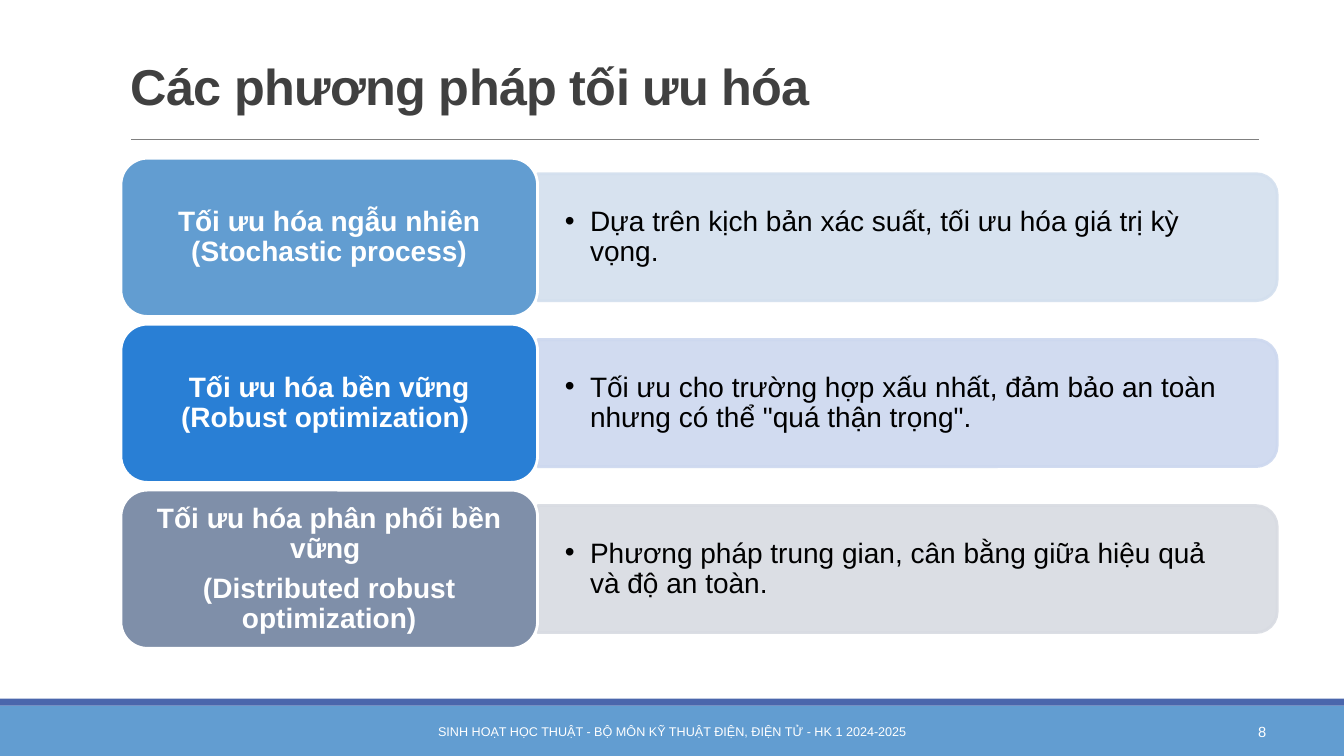
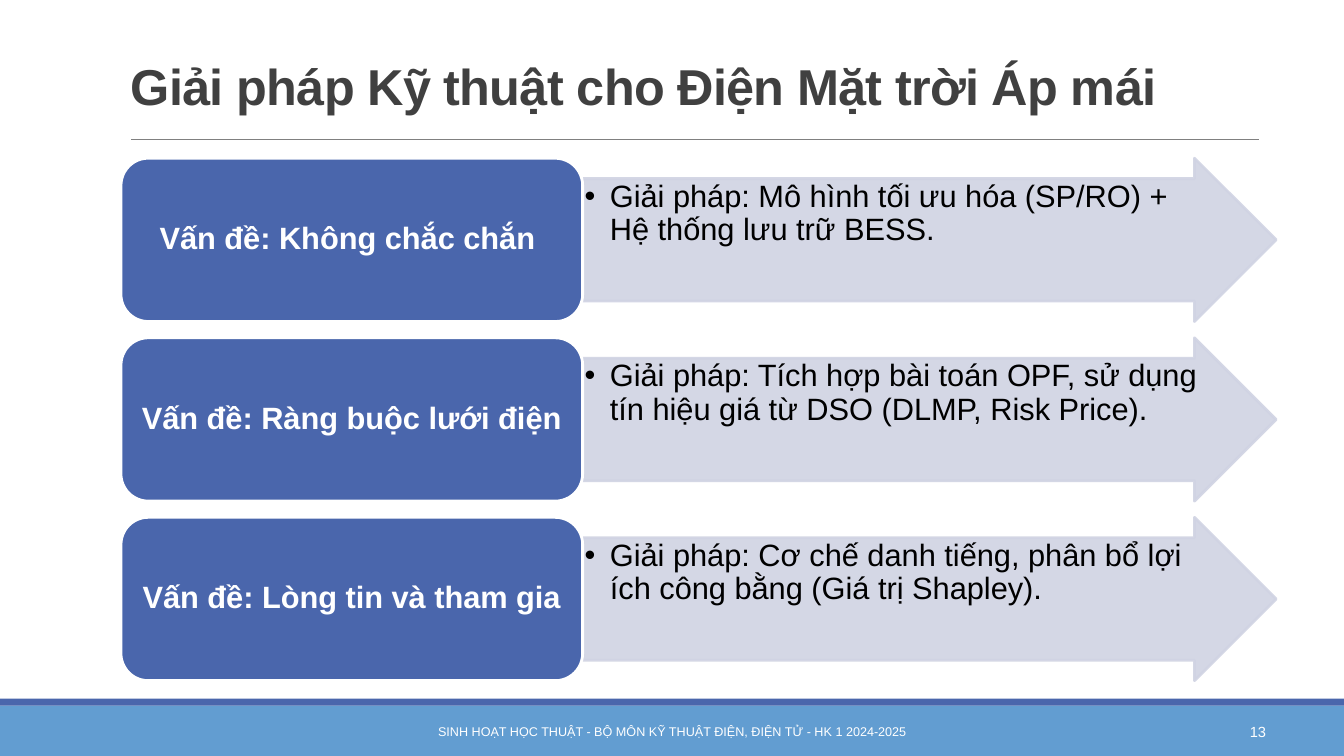
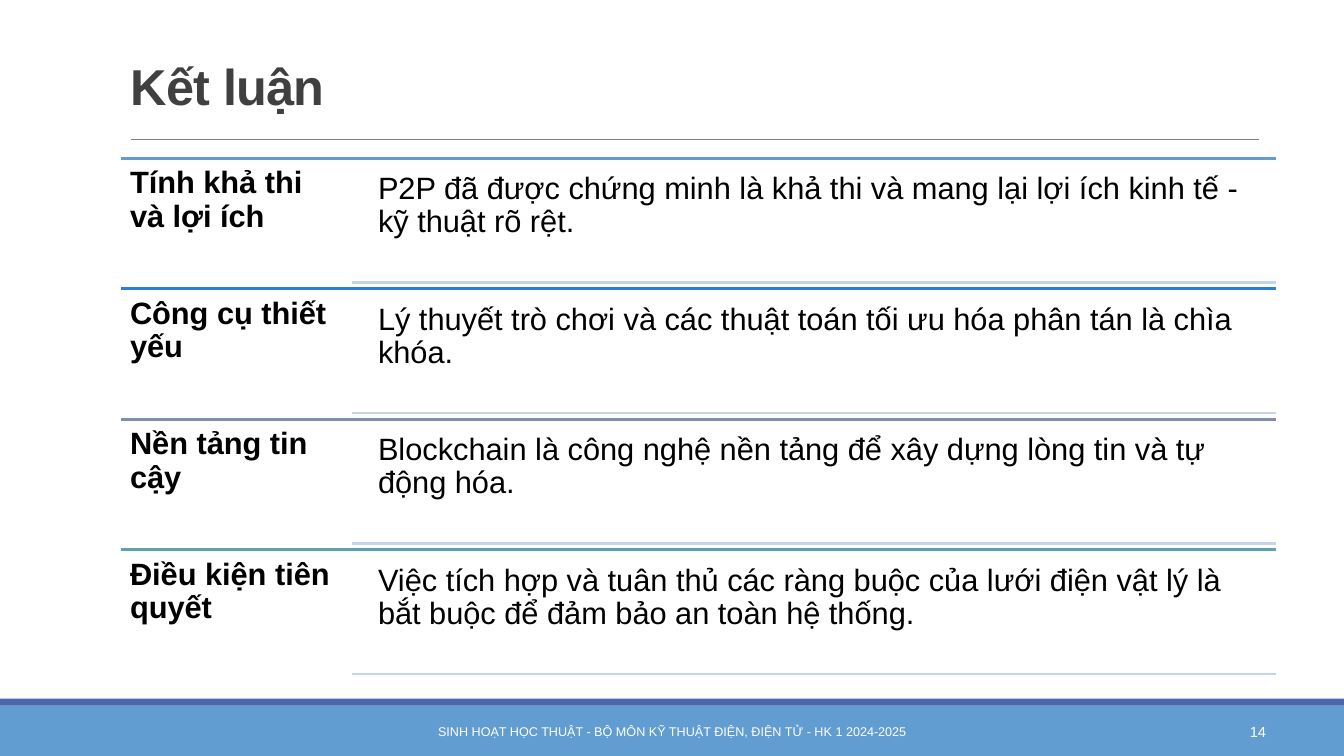
from lxml.etree import SubElement
from pptx import Presentation
from pptx.dml.color import RGBColor
from pptx.enum.shapes import MSO_CONNECTOR, MSO_SHAPE
from pptx.enum.text import MSO_ANCHOR, PP_ALIGN
from pptx.oxml.ns import qn
from pptx.util import Inches, Pt

HUES = {
    "sky": "629DD1", "royal": "4A66AC", "azure": "297FD5", "slate": "7F8FA9",
    "teal": "5AA2AE", "ice": "D3DFEE", "mist": "CDD8EF", "ash": "D8DBE2",
    "haze": "D0D3E3", "pale": "C5D5E9", "rule": "808080", "ink": "404040",
    "black": "000000", "white": "FFFFFF",
}
LEFT, RIGHT, TOP = 9, 94.95, 20.93
BAND = 93.33
FOOT = "SINH HOẠT HỌC THUẬT - BỘ MÔN KỸ THUẬT ĐIỆN, ĐIỆN TỬ - HK 1 2024-2025"

deck = Presentation()
deck.slide_width, deck.slide_height = Inches(13.333), Inches(7.5)
wide, high = deck.slide_width, deck.slide_height


def draw(page, kind, box, fill=None, line=None, width=2, clear=False, turn=False):
    x, y, w, h = [int(part * size / 100) for part, size in zip(box, (wide, high) * 2)]
    if kind == "text":
        return page.shapes.add_textbox(x, y, w, h)
    if kind == "line":
        shape = page.shapes.add_connector(MSO_CONNECTOR.STRAIGHT, x, y, x + w, y + h)
    else:
        if turn:
            x, y, w, h = x + (w - h) // 2, y + (h - w) // 2, h, w
        shape = page.shapes.add_shape(kind, x, y, w, h)
        shape.shadow.inherit = False
        shape.rotation = 90 if turn else 0
        shape.fill.solid()
        shape.fill.fore_color.rgb = RGBColor.from_string(HUES[fill])
    if line:
        shape.line.color.rgb = RGBColor.from_string(HUES[line])
        shape.line.width = Pt(width)
    else:
        shape.line.fill.background()
    props = shape._element.spPr
    if kind == "line":
        SubElement(props, qn("a:effectLst"))
    if clear:
        for tone in props.iter(qn("a:srgbClr")):
            SubElement(tone, qn("a:alpha"), val="90000")
    return shape


def write(shape, text, size, hue, bold=False, align=PP_ALIGN.LEFT, anchor=MSO_ANCHOR.TOP,
          inset=(0.1, 0.05), lead=1.0, gap=0, dot=False, track=None):
    frame = shape.text_frame
    across, down = map(Inches, inset)
    look = {"word_wrap": True, "vertical_anchor": anchor, "margin_left": across,
            "margin_right": across, "margin_top": down, "margin_bottom": down}
    for key, val in look.items():
        setattr(frame, key, val)
    frame.text = text
    for para in frame.paragraphs:
        for key, val in {"alignment": align, "line_spacing": lead,
                         "space_after": Pt(size * gap)}.items():
            setattr(para, key, val)
        run = para.runs[0]
        for key, val in {"name": "Arial", "size": Pt(size), "bold": bold}.items():
            setattr(run.font, key, val)
        run.font.color.rgb = RGBColor.from_string(HUES[hue])
        if track:
            run.font._element.set("spc", str(track))
        if dot:
            props = para._p.get_or_add_pPr()
            props.set("marL", str(Inches(0.25)))
            props.set("indent", str(-Inches(0.25)))
            SubElement(props, qn("a:buFont"), typeface="Arial")
            SubElement(props, qn("a:buChar"), char="•")


mid = {"anchor": MSO_ANCHOR.MIDDLE}
label = {"hue": "white", "bold": True, "align": PP_ALIGN.CENTER, "lead": 0.9, "gap": 0.35, **mid}
point = {"hue": "black", "lead": 0.9, "gap": 0.15, "dot": True}
plain = {"size": 22, "hue": "black", "lead": 0.9, "gap": 0.35, "inset": (0.09, 0.09)}

pages = []
for title, number in (("Các phương pháp tối ưu hóa", 8),
                      ("Giải pháp Kỹ thuật cho Điện Mặt trời Áp mái", 13),
                      ("Kết luận", 14)):
    page = deck.slides.add_slide(deck.slide_layouts[6])
    draw(page, MSO_SHAPE.RECTANGLE, (0, BAND, 100, 100 - BAND), "sky")
    draw(page, MSO_SHAPE.RECTANGLE, (0, 92.4, 100, BAND - 92.4), "royal")
    draw(page, "line", (9.75, 18.47, 83.95, 0), line="rule", width=0.5)
    write(draw(page, "text", (LEFT, 4.13, RIGHT - LEFT, 11.87)), title, 36, "ink", True,
          anchor=MSO_ANCHOR.BOTTOM, lead=0.85, track=-50)
    write(draw(page, "text", (30.23, 94.13, 39.54, 5.33)), FOOT, 9, "white",
          align=PP_ALIGN.CENTER, **mid)
    write(draw(page, "text", (81.23, 94.13, 13.72, 5.33)), str(number), 10.5, "white",
          align=PP_ALIGN.RIGHT, **mid)
    pages.append(page)
ways, fixes, close = pages

for row, (name, note, hue, tint) in enumerate((
    ("Tối ưu hóa ngẫu nhiên (Stochastic process)",
     "Dựa trên kịch bản xác suất, tối ưu hóa giá trị kỳ vọng.", "sky", "ice"),
    ("Tối ưu hóa bền vững (Robust optimization) ",
     "Tối ưu cho trường hợp xấu nhất, đảm bảo an toàn nhưng có thể \"quá thận trọng\".",
     "azure", "mist"),
    ("Tối ưu hóa phân phối bền vững \n(Distributed robust optimization)",
     "Phương pháp trung gian, cân bằng giữa hiệu quả và độ an toàn.", "slate", "ash"),
)):
    y = TOP + row * 21.95
    draw(ways, MSO_SHAPE.ROUND_2_SAME_RECTANGLE, (40, y + 2.05, 55.03, 16.8), tint, tint,
         clear=True, turn=True)
    write(draw(ways, "text", (40, y + 2.05, 54.5, 16.8)), note, 20, inset=(0.27, 0.14),
          **point, **mid)
    write(draw(ways, MSO_SHAPE.ROUNDED_RECTANGLE, (LEFT, y, 31, 20.93), hue, "white"),
          name, 20, inset=(0.08, 0.04), **label)

for row, (name, note) in enumerate((
    ("Vấn đề: Không chắc chắn ",
     "Giải pháp: Mô hình tối ưu hóa (SP/RO) + Hệ thống lưu trữ BESS."),
    ("Vấn đề: Ràng buộc lưới điện ",
     "Giải pháp: Tích hợp bài toán OPF, sử dụng tín hiệu giá từ DSO (DLMP, Risk Price)."),
    ("Vấn đề: Lòng tin và tham gia",
     "Giải pháp: Cơ chế danh tiếng, phân bổ lợi ích công bằng (Giá trị Shapley)."),
)):
    y = TOP + row * 23.75
    arrow = draw(fixes, MSO_SHAPE.RIGHT_ARROW, (43.35, y, RIGHT - 43.35, 21.6), "haze", "haze",
                 clear=True)
    arrow.adjustments[0] = 0.75
    write(arrow, note, 22, inset=(0.02, 0.02), **point)
    write(draw(fixes, MSO_SHAPE.ROUNDED_RECTANGLE, (LEFT, y, 34.35, 21.6), "royal", "white"),
          name, 22, inset=(0.09, 0.05), **label)

for row, (name, note, hue) in enumerate((
    ("Tính khả thi và lợi ích",
     "P2P đã được chứng minh là khả thi và mang lại lợi ích kinh tế - kỹ thuật rõ rệt.", "sky"),
    ("Công cụ thiết yếu",
     "Lý thuyết trò chơi và các thuật toán tối ưu hóa phân tán là chìa khóa.", "azure"),
    ("Nền tảng tin cậy",
     "Blockchain là công nghệ nền tảng để xây dựng lòng tin và tự động hóa.", "slate"),
    ("Điều kiện tiên quyết",
     "Việc tích hợp và tuân thủ các ràng buộc của lưới điện vật lý là bắt buộc để đảm bảo "
     "an toàn hệ thống.", "teal"),
)):
    y = TOP + row * 17.26
    draw(close, "line", (LEFT, y, RIGHT - LEFT, 0), line=hue)
    write(draw(close, "text", (LEFT, y, 17.18, 17.26)), name, bold=True, **plain)
    write(draw(close, "text", (27.45, y + 0.75, 67.5, 15.7)), note, **plain)
    draw(close, "line", (26.18, y + 16.45, RIGHT - 26.18, 0), line="pale")

deck.save("out.pptx")
